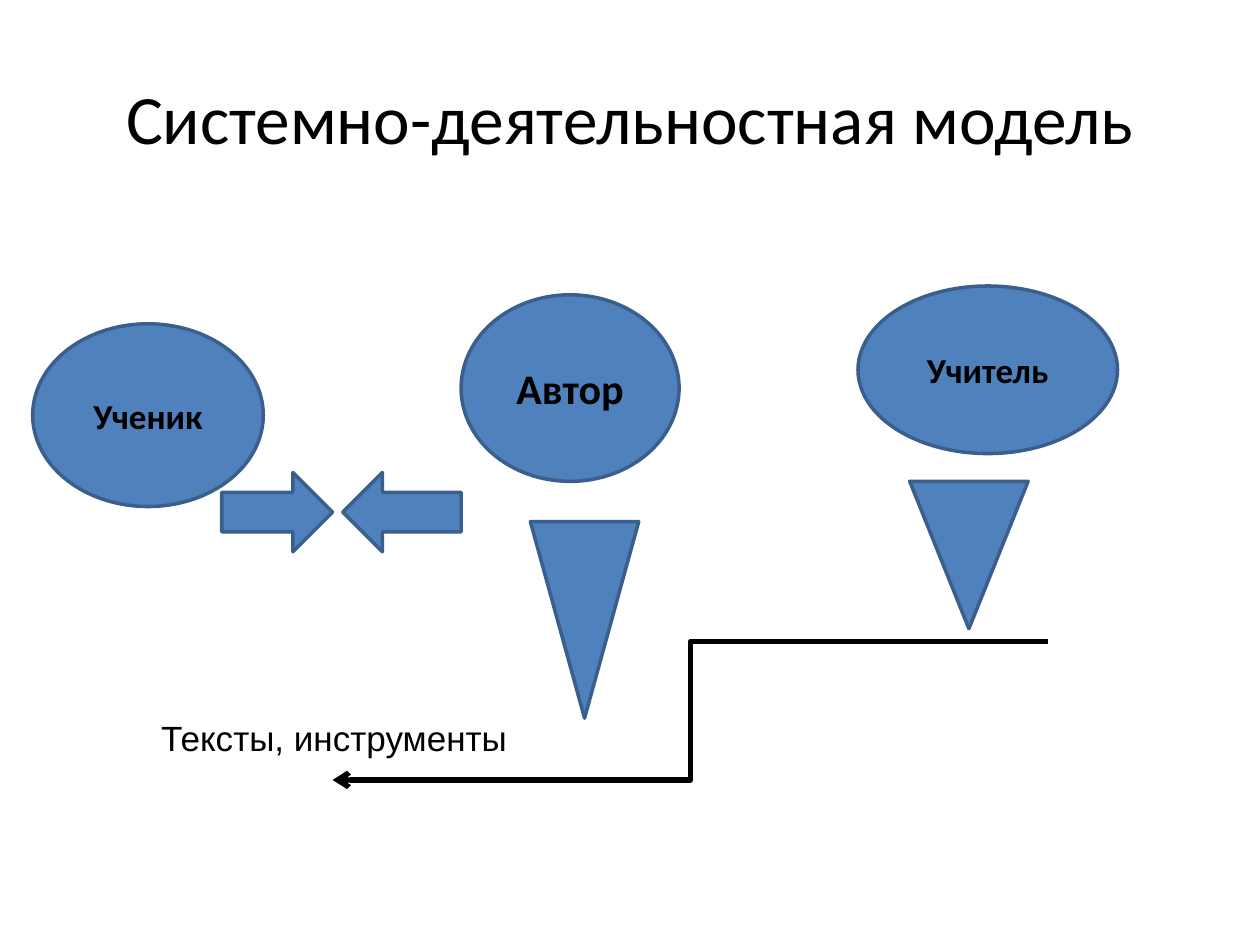
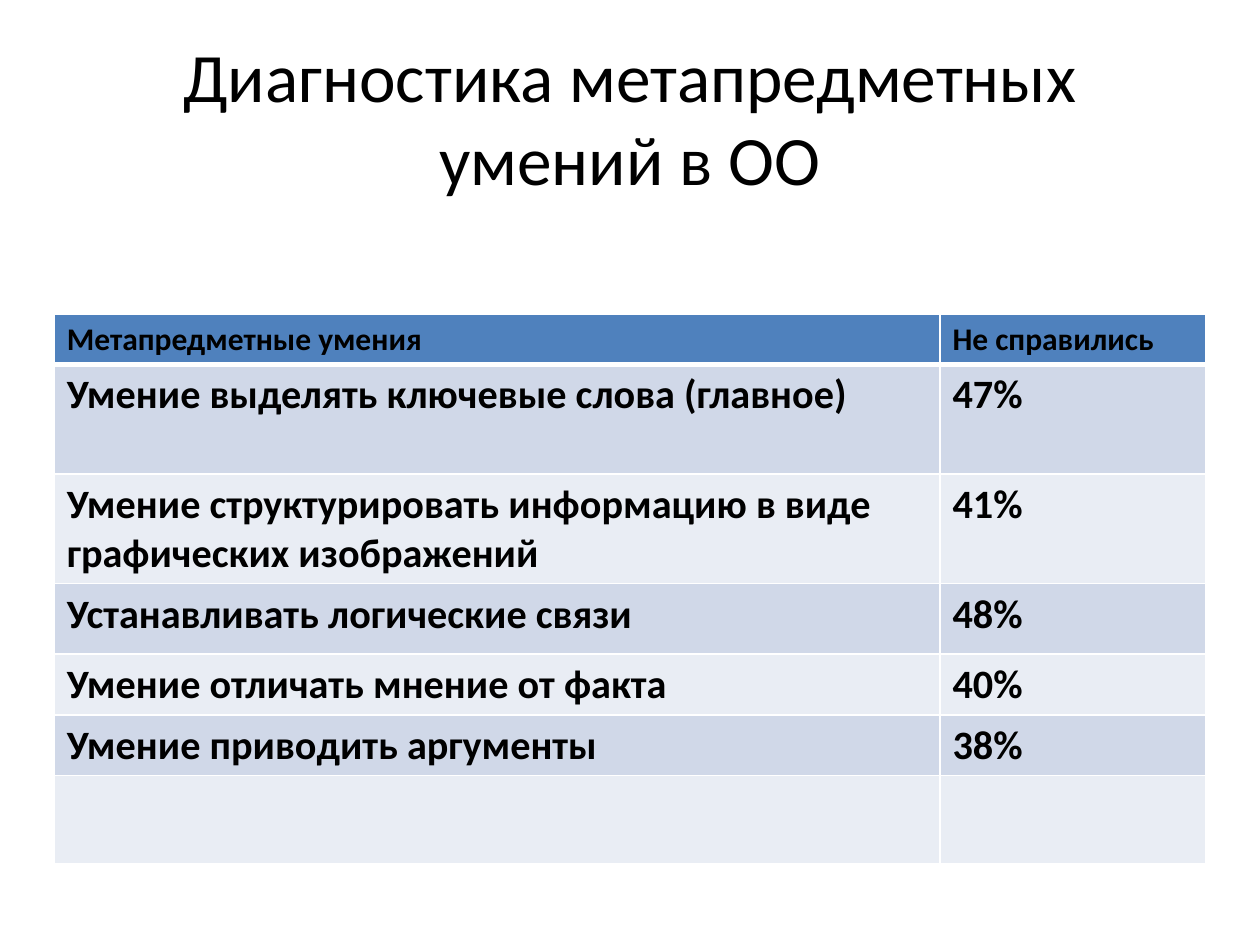
from lxml import etree
from pptx import Presentation
from pptx import util as u
from pptx.dml.color import RGBColor
from pptx.enum import shapes, text
from pptx.oxml import ns

COLUMNS, ROWS = 100, 75
UNIT = u.Inches(0.1)
BLACK, WHITE = "000000", "FFFFFF"
BLUE, OUTLINE = "4F81BD", "3A5F8C"
BANDS = ("D0D8E8", "E9EDF4")
HEADING, LABEL = "Calibri", "Arial"
TITLE_AREA = (5, 3, 90, 12.5)
SHAPE = shapes.MSO_SHAPE

MODEL_TITLE = "Системно-деятельностная модель"
ROLES = [
    ("Учитель", 20, (68.1, 22.7, 20.6, 13.3)),
    ("Автор", 24, (36.6, 23.4, 17.3, 14.8)),
    ("Ученик", 20, (2.6, 25.7, 18.3, 14.5)),
]
POINTERS = [
    (SHAPE.FLOWCHART_MERGE, (72.2, 38.2, 9.4, 11.7)),
    (SHAPE.FLOWCHART_MERGE, (42.1, 41.4, 8.6, 15.6)),
    (SHAPE.RIGHT_ARROW, (17.6, 37.5, 8.8, 6.3)),
    (SHAPE.LEFT_ARROW, (27.2, 37.5, 9.4, 6.3)),
]
FEEDBACK_PATH = (83.2, 50.9, 26.4, 61.9)
TOOLS_LABEL = ("Тексты, инструменты", (11.8, 56.4, 31.9, 4.4))

SKILLS_TITLE = "Диагностика метапредметных умений в ОО"
SKILLS = [
    ("Метапредметные умения", "Не справились"),
    ("Умение выделять ключевые слова (главное)", "47%"),
    ("Умение структурировать информацию в виде графических изображений", "41%"),
    ("Устанавливать логические связи", "48%"),
    ("Умение отличать мнение от факта", "40%"),
    ("Умение приводить аргументы", "38%"),
    ("", ""),
]
SKILLS_CORNER = (4.3, 24.9)
SKILL_WIDTHS = (70.3, 21.1)
SKILL_HEIGHTS = (4, 8.7, 8.7, 5.6, 4.8, 4.8, 7)


def grid(*lengths):
    return [round(length * UNIT) for length in lengths]


def color(value):
    return RGBColor.from_string(value)


def write(frame, words, size, font=HEADING, bold=False, align=None):
    frame.text = words
    para = frame.paragraphs[0]
    para.alignment = align
    for span in para.runs:
        span.font.name = font
        span.font.size = u.Pt(size)
        span.font.bold = bold
        span.font.color.rgb = color(BLACK)


def add_text(slide, area, words, size, **style):
    box = slide.shapes.add_textbox(*grid(*area))
    box.text_frame.word_wrap = True
    write(box.text_frame, words, size, **style)
    return box


def add_slide(deck, title):
    slide = deck.slides.add_slide(deck.slide_layouts[6])
    box = add_text(slide, TITLE_AREA, title, 39.6, align=text.PP_ALIGN.CENTER)
    box.text_frame.vertical_anchor = text.MSO_ANCHOR.MIDDLE
    return slide


def add_figure(slide, kind, area):
    figure = slide.shapes.add_shape(kind, *grid(*area))
    figure.shadow.inherit = False
    figure.fill.solid()
    figure.fill.fore_color.rgb = color(BLUE)
    figure.line.color.rgb = color(OUTLINE)
    figure.line.width = u.Pt(2)
    return figure


def add_feedback(slide):
    arrow = slide.shapes.add_connector(
        shapes.MSO_CONNECTOR.ELBOW, *grid(*FEEDBACK_PATH))
    arrow.line.color.rgb = color(BLACK)
    arrow.line.width = u.Pt(3)
    etree.SubElement(arrow.line._get_or_add_ln(), ns.qn("a:tailEnd"), type="arrow")
    etree.SubElement(arrow._element.spPr, ns.qn("a:effectLst"))


def add_borders(cell, top, bottom):
    properties = cell._tc.get_or_add_tcPr()
    for side, width in (("L", 1), ("R", 1), ("T", top), ("B", bottom)):
        line = etree.SubElement(
            properties, ns.qn(f"a:ln{side}"), w=str(u.Pt(width)))
        fill = etree.SubElement(line, ns.qn("a:solidFill"))
        etree.SubElement(fill, ns.qn("a:srgbClr"), val=WHITE)


def build_model(deck):
    slide = add_slide(deck, MODEL_TITLE)
    for name, size, area in ROLES:
        role = add_figure(slide, SHAPE.FLOWCHART_CONNECTOR, area)
        role.text_frame.vertical_anchor = text.MSO_ANCHOR.MIDDLE
        write(role.text_frame, name, size, bold=True, align=text.PP_ALIGN.CENTER)
    for kind, area in POINTERS:
        add_figure(slide, kind, area)
    add_feedback(slide)
    words, area = TOOLS_LABEL
    add_text(slide, area, words, 20, font=LABEL)


def build_skills(deck):
    slide = add_slide(deck, SKILLS_TITLE)
    area = (*SKILLS_CORNER, sum(SKILL_WIDTHS), sum(SKILL_HEIGHTS))
    table = slide.shapes.add_table(
        len(SKILLS), len(SKILL_WIDTHS), *grid(*area)).table
    for column, width in zip(table.columns, grid(*SKILL_WIDTHS)):
        column.width = width
    for index, height in enumerate(grid(*SKILL_HEIGHTS)):
        table.rows[index].height = height
        header = index == 0
        for cell, words in zip(table.rows[index].cells, SKILLS[index]):
            write(cell.text_frame, words, 18 if header else 23, bold=True)
            add_borders(cell, 3 if index == 1 else 1, 3 if header else 1)
            cell.fill.solid()
            cell.fill.fore_color.rgb = color(
                BLUE if header else BANDS[(index - 1) % 2])


def main():
    deck = Presentation()
    deck.slide_width, deck.slide_height = grid(COLUMNS, ROWS)
    build_model(deck)
    build_skills(deck)
    deck.save("out.pptx")


if __name__ == "__main__":
    main()
